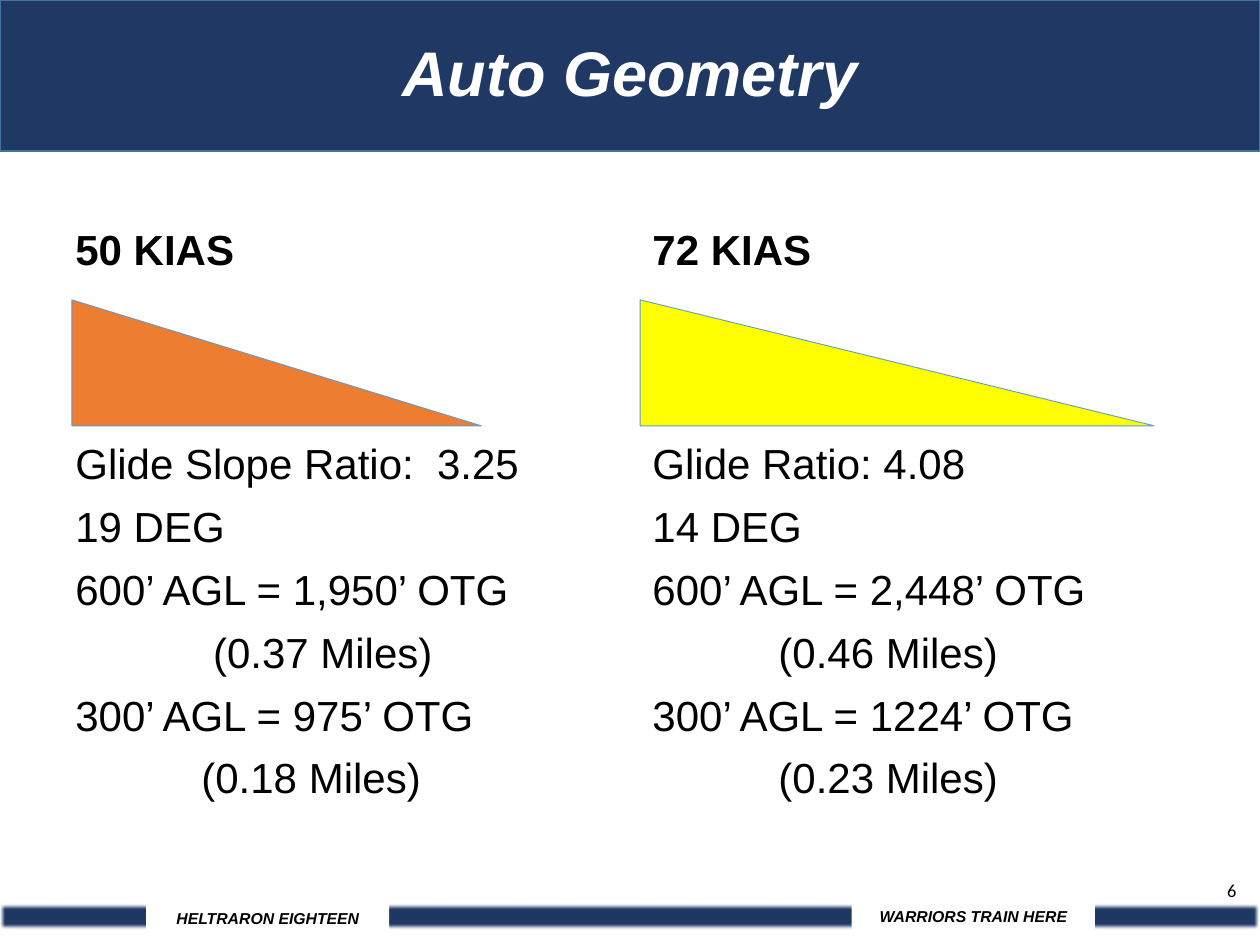
from lxml import etree
from pptx import Presentation
from pptx.dml.color import RGBColor
from pptx.enum.shapes import MSO_SHAPE
from pptx.enum.text import MSO_ANCHOR, PP_ALIGN
from pptx.oxml.ns import qn
from pptx.util import Inches, Pt

RECT, WEDGE = MSO_SHAPE.RECTANGLE, MSO_SHAPE.RIGHT_TRIANGLE
TOP, MID, LOW = MSO_ANCHOR.TOP, MSO_ANCHOR.MIDDLE, MSO_ANCHOR.BOTTOM
LEFT, CENTER = PP_ALIGN.LEFT, PP_ALIGN.CENTER
COLORS = {"navy": "203864", "edge": "43739E", "white": "FFFFFF", "black": "000000",
          "orange": "ED7D31", "yellow": "FFFF00", "blue": "5B9BD5"}

prs = Presentation()
prs.slide_width, prs.slide_height = Inches(10), Inches(7.5)
slide = prs.slides.add_slide(prs.slide_layouts[6])


def add_block(kind, box, fill, line=None, width=1):
    """Add a filled preset shape; it has no outline unless line is given."""
    shape = slide.shapes.add_shape(kind, *map(Inches, box))
    shape.shadow.inherit = False
    shape.fill.solid()
    shape.fill.fore_color.rgb = RGBColor.from_string(COLORS[fill])
    if line:
        shape.line.color.rgb = RGBColor.from_string(COLORS[line])
        shape.line.width = Pt(width)
    else:
        shape.line.fill.background()
    return shape


def write(shape, lines, size, color="black", bold=False, italic=False,
          align=LEFT, anchor=TOP, font="Arial", spacing=1):
    """Fill a shape with one paragraph per line, all in one style."""
    frame = shape.text_frame
    frame.word_wrap = True
    frame.vertical_anchor = anchor
    frame.text = "\n".join(lines)
    for i, para in enumerate(frame.paragraphs):
        para.alignment = align
        para.line_spacing = spacing
        para.space_before = Pt(10 if i else 0)
        for run in para.runs:
            run.font.name, run.font.size = font, Pt(size)
            run.font.bold, run.font.italic = bold, italic
            run.font.color.rgb = RGBColor.from_string(COLORS[color])


# Title band
add_block(RECT, (0, 0, 10, 1.2), "navy", "edge")
title = slide.shapes.add_textbox(0, Inches(0.08), Inches(10), Inches(1.05))
write(title, ["Auto Geometry"], 36, "white", True, True, CENTER, MID, spacing=0.9)

# Footer bar with soft edges, mottoes and page number
bar = add_block(RECT, (0, 7.17, 10, 0.21), "navy")
effects = bar.element.spPr.find(qn("a:effectLst"))
etree.SubElement(effects, qn("a:softEdge"), rad=str(Pt(2.5)))
for x, y, motto in [(1.16, 7.14, "HELTRARON EIGHTEEN"),
                    (6.76, 7.13, "WARRIORS TRAIN HERE")]:
    label = add_block(RECT, (x, y, 1.93, 0.29), "white")
    write(label, [motto], 9, bold=True, italic=True, align=CENTER, anchor=MID)
page = slide.shapes.add_textbox(Inches(9.55), Inches(6.93), Inches(0.45), Inches(0.29))
write(page, ["6"], 10.5, align=CENTER, font="Calibri")

# One column per airspeed; each wedge is as long as its glide ratio
columns = [
    (0.5, 4.42, "50 KIAS", 0.57, 3.25, "orange",
     ["Glide Slope Ratio:  3.25", "19 DEG", "600’ AGL = 1,950’ OTG",
      "\t\t (0.37 Miles)", "300’ AGL = 975’ OTG", "\t\t(0.18 Miles)"]),
    (5.08, 4.61, "72 KIAS", 5.08, 4.08, "yellow",
     ["Glide Ratio: 4.08", "14 DEG", "600’ AGL = 2,448’ OTG",
      "\t\t(0.46 Miles)", "300’ AGL = 1224’ OTG", "\t\t(0.23 Miles)"]),
]
for x, width, speed, start, ratio, color, facts in columns:
    head = slide.shapes.add_textbox(Inches(x), Inches(1.53), Inches(4.42), Inches(0.7))
    write(head, [speed], 24, bold=True, anchor=LOW, spacing=0.9)
    body = slide.shapes.add_textbox(Inches(x), Inches(3.47), Inches(width), Inches(3.23))
    write(body, facts, 24, spacing=0.9)
    add_block(WEDGE, (start, 2.38, ratio, 1), color, "blue", 0.5)

prs.save("out.pptx")
